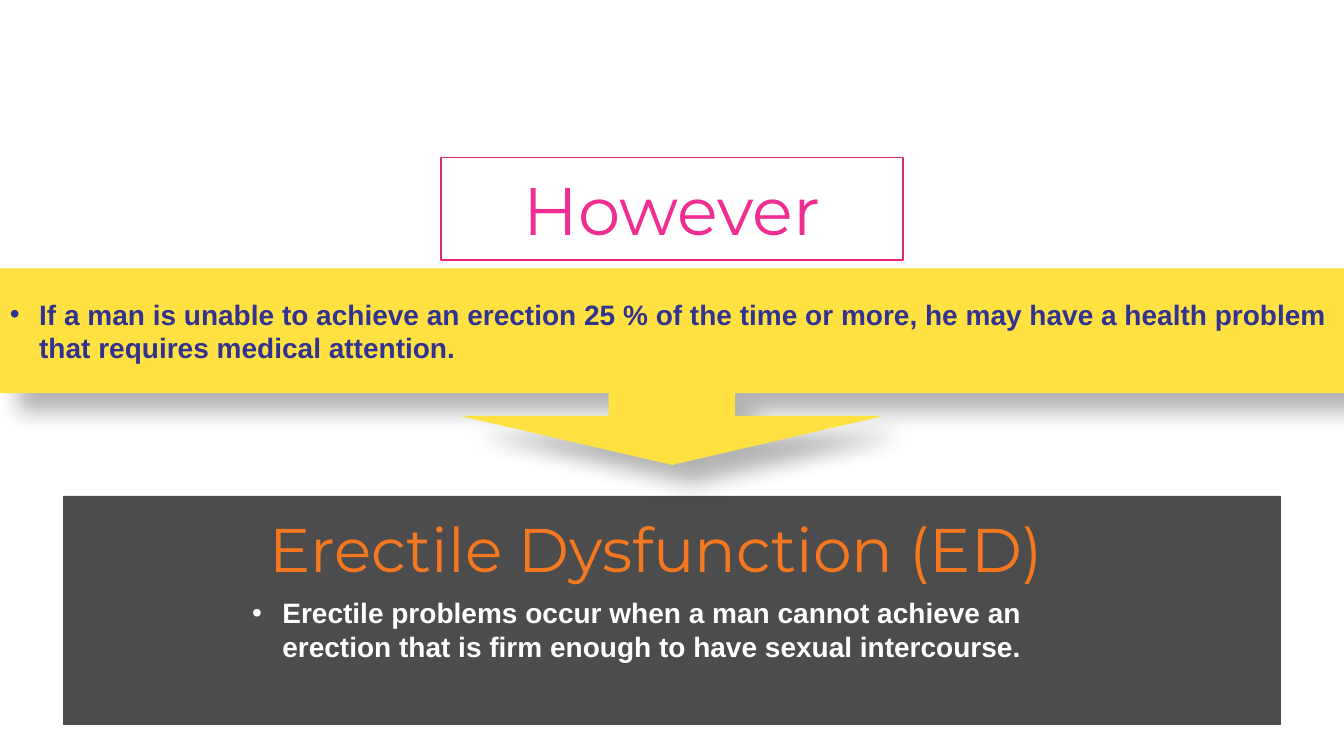
from lxml import etree
from pptx import Presentation
from pptx import util as u
from pptx.dml.color import RGBColor
from pptx.enum import shapes, text
from pptx.oxml.ns import qn

WIDE, HIGH = 13.33, 7.5
HUES = {"white": "FFFFFF", "black": "000000", "pink": "F02D91", "edge": "E52774",
        "orange": "F57820", "yellow": "FFE241", "navy": "323291"}
KIND = shapes.MSO_SHAPE


def hue(name):
    return RGBColor.from_string(HUES[name])


def part(box, left, top, width, height):
    """Return the box that takes the given shares of a box."""
    x, y, w, h = box
    return x + left * w, y + top * h, width * w, height * h


def sub(node, tag, **attrs):
    return etree.SubElement(node, qn(tag), {k: str(v) for k, v in attrs.items()})


def fade(color, share):
    sub(color, "a:alpha", val=int(share * 100000))


def block(slide, kind, box, fill):
    shape = slide.shapes.add_shape(kind, *map(u.Inches, box))
    shape.shadow.inherit = False
    shape.fill.solid()
    shape.fill.fore_color.rgb = hue(fill)
    shape.line.fill.background()
    return shape


def write(shape, words, size, font, color, bold=False, indent=0,
          anchor=text.MSO_ANCHOR.MIDDLE):
    """Fill a shape with one paragraph: a bullet if indented, else centred."""
    frame = shape.text_frame
    frame.word_wrap = True
    frame.vertical_anchor = anchor
    para = frame.paragraphs[0]
    para.alignment = text.PP_ALIGN.LEFT if indent else text.PP_ALIGN.CENTER
    if indent:
        props = para._p.get_or_add_pPr()
        props.set("marL", str(u.Inches(indent)))
        props.set("indent", str(-u.Inches(indent)))
        sub(props, "a:buFont", typeface="Arial")
        sub(props, "a:buChar", char="•")
    run = para.add_run()
    run.text = words
    run.font.size, run.font.name, run.font.bold = u.Pt(size), font, bold
    run.font.color.rgb = hue(color)


def label(slide, box, *args, **more):
    note = slide.shapes.add_textbox(*map(u.Inches, box))
    write(note, *args, anchor=text.MSO_ANCHOR.TOP, **more)


def title(slide, box):
    shape = block(slide, KIND.RECTANGLE, box, "white")
    shape.line.color.rgb = hue("edge")
    shape.line.width = u.Pt(1)
    write(shape, "However", 48, "Montserrat", "pink")


def panel(slide, box):
    back = block(slide, KIND.RECTANGLE, box, "black")
    fade(back.fill._xPr.find(".//" + qn("a:srgbClr")), 0.7)
    label(slide, part(box, 0.147, 0.414, 0.673, 0.34),
          "Erectile problems occur when a man cannot achieve an erection "
          "that is firm enough to have sexual intercourse.",
          20, "Arial", "white", bold=True, indent=0.3)
    label(slide, part(box, -0.026, 0.044, 1.027, 0.37),
          "Erectile Dysfunction (ED)", 44, "Montserrat", "orange")


def callout(slide, box):
    shape = block(slide, KIND.DOWN_ARROW_CALLOUT, box, "yellow")
    for i, share in enumerate((0.644, 1.079, 0.25, 0.634)):
        shape.adjustments[i] = share
    glow = shape._element.spPr.find(qn("a:effectLst"))
    shade = sub(glow, "a:outerShdw", blurRad=u.Pt(15), dist=u.Pt(18),
                dir=45 * 60000, algn="tl", rotWithShape=0)
    fade(sub(shade, "a:srgbClr", val=HUES["black"]), 0.3)
    write(shape, "If a man is unable to achieve an erection 25 % of the time or more, "
          "he may have a health problem that requires medical attention.",
          20, "Arial", "navy", bold=True, indent=0.29)


def main():
    deck = Presentation()
    deck.slide_width, deck.slide_height = u.Inches(WIDE), u.Inches(HIGH)
    slide = deck.slides.add_slide(deck.slide_layouts[6])
    page = (0, 0, WIDE, HIGH)
    panel(slide, part(page, 0.047, 0.656, 0.906, 0.303))
    title(slide, part(page, 0.328, 0.208, 0.344, 0.136))
    callout(slide, part(page, 0, 0.355, 1, 0.26))
    deck.save("out.pptx")


if __name__ == "__main__":
    main()
